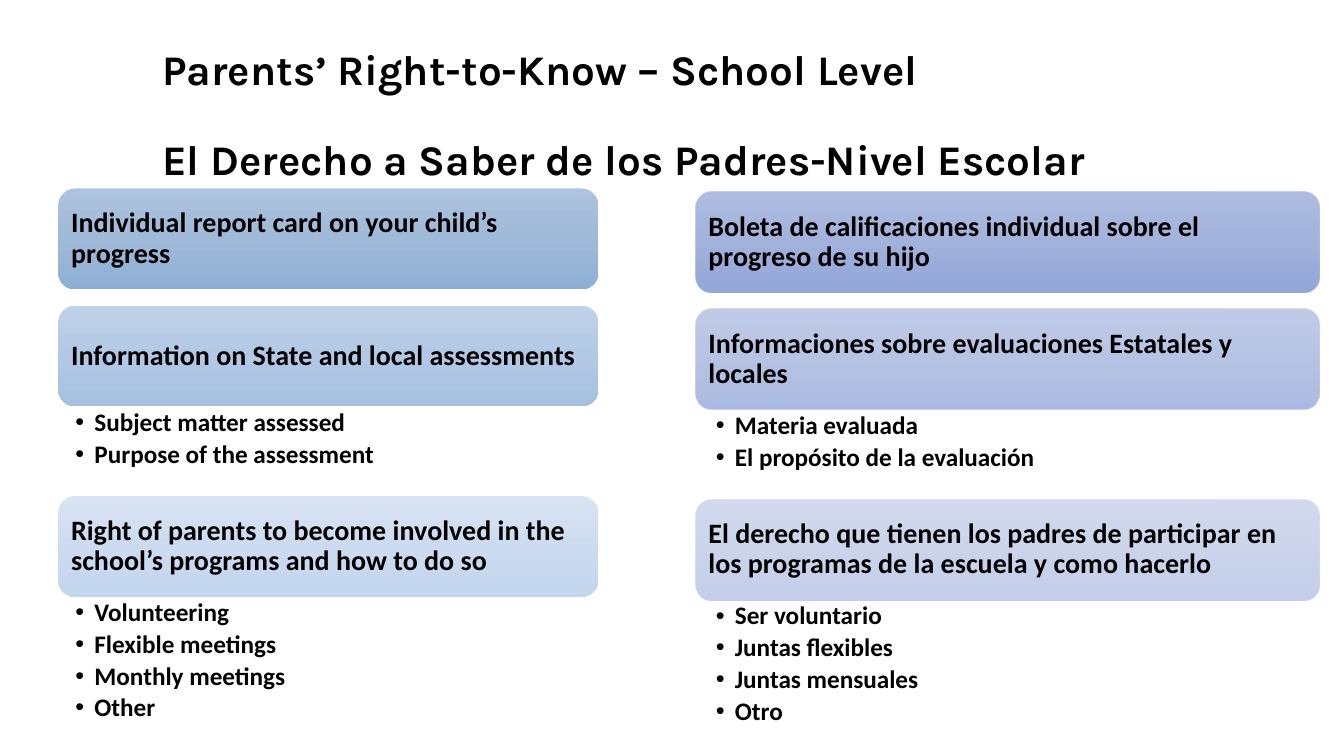
from dataclasses import dataclass

from pptx import Presentation
from pptx.dml.color import RGBColor
from pptx.enum.shapes import MSO_SHAPE
from pptx.enum.text import MSO_ANCHOR as Anchor, MSO_AUTO_SIZE as AutoSize, PP_ALIGN as Align
from pptx.oxml import parse_xml
from pptx.oxml.ns import nsdecls, qn
from pptx.util import Cm, Pt

COLORS = {
    "text": "000000",
    "steel_top": "ADC3DE", "steel_mid": "9FB9D8", "steel_end": "8EAFD5",
    "sky_top": "BFD2E9", "sky_mid": "B2C8E4", "sky_end": "A5C1E2",
    "ice_top": "D9E4F3", "ice_mid": "CCDBEF", "ice_end": "C4D6EE",
    "violet_top": "A8B7DF", "violet_mid": "9AABD9", "violet_end": "889ED7",
}
TITLE_LINES = ["Parents’ Right-to-Know – School Level",
               "El Derecho a Saber de los Padres-Nivel Escolar"]
HEADING_OFFSETS = (0, 2.95, 7.75)
HEADING_HEIGHT = 2.54
BULLET_INDENT = Cm(0.48)


@dataclass
class Topic:
    heading: str
    tint: str
    opacity: int = 100
    bullets: tuple[str, ...] = ()
    placeholder: int = 0
    list_height: float = 0


@dataclass
class Column:
    left: float
    top: float
    width: float
    list_inset: float
    topics: list[Topic]


COLUMNS = [
    Column(1.47, 4.75, 13.61, 0.43, [
        Topic("Individual report card on your child’s progress", "steel"),
        Topic("Information on State and local assessments", "sky", 100,
              ("Subject matter assessed", "Purpose of the assessment"), 1, 2.26),
        Topic("Right of parents to become involved in the school’s programs and how to do so",
              "ice", 100,
              ("Volunteering", "Flexible meetings", "Monthly meetings", "Other"), 2, 3.45),
    ]),
    Column(17.53, 4.83, 15.72, 0.51, [
        Topic("Boleta de calificaciones individual sobre el progreso de su hijo", "violet", 90),
        Topic("Informaciones sobre evaluaciones Estatales y locales", "violet", 70,
              ("Materia evaluada", "El propósito de la evaluación"), 3, 2.26),
        Topic("El derecho que tienen los padres de participar en los programas "
              "de la escuela y como hacerlo", "violet", 50,
              ("Ser voluntario", "Juntas flexibles", "Juntas mensuales", "Otro"), 4, 3.45),
    ]),
]


def place(sp, left: float, top: float, width: float, height: float) -> None:
    sp.left, sp.top, sp.width, sp.height = Cm(left), Cm(top), Cm(width), Cm(height)


def set_frame(tf, anchor, left: float, top: float, right: float, bottom: float) -> None:
    tf.word_wrap = True
    tf.auto_size = AutoSize.NONE
    tf.vertical_anchor = anchor
    tf.margin_left, tf.margin_top = Cm(left), Cm(top)
    tf.margin_right, tf.margin_bottom = Cm(right), Cm(bottom)


def write_lines(tf, lines, font: str, size: float) -> None:
    """Write one bold, left-aligned paragraph per line."""
    tf.text = "\n".join(lines)
    for p in tf.paragraphs:
        p.alignment = Align.LEFT
        p.line_spacing = 0.9
        p.space_before = p.space_after = Pt(0)
        p.font.name, p.font.size, p.font.bold = font, Pt(size), True
        p.font.color.rgb = RGBColor.from_string(COLORS["text"])


def fill_gradient(sp, tint: str, opacity: int) -> None:
    """Fill from top to bottom with the three stops of a tint."""
    stops = "".join(
        f'<a:gs pos="{pos * 1000}"><a:srgbClr val="{COLORS[f"{tint}_{part}"]}">'
        f'<a:alpha val="{opacity * 1000}"/></a:srgbClr></a:gs>'
        for pos, part in ((0, "top"), (50, "mid"), (100, "end")))
    sp.fill.gradient()
    spPr = sp._element.spPr
    spPr.replace(spPr.find(qn("a:gradFill")), parse_xml(
        f'<a:gradFill {nsdecls("a")} rotWithShape="1"><a:gsLst>{stops}</a:gsLst>'
        '<a:lin ang="5400000" scaled="0"/></a:gradFill>'))


def add_bullet(p) -> None:
    pPr = p._p.get_or_add_pPr()
    pPr.set("marL", str(BULLET_INDENT))
    pPr.set("indent", str(-BULLET_INDENT))
    bullet = parse_xml(f'<a:buChar {nsdecls("a")} char="•"/>')
    pPr.insert_element_before(bullet, "a:tabLst", "a:defRPr", "a:extLst")


def draw_title(slide) -> None:
    sp = slide.shapes.title
    place(sp, 3.84, 0.53, 26.16, 3.58)
    set_frame(sp.text_frame, Anchor.TOP, 0.25, 0.7, 0.25, 0.13)
    write_lines(sp.text_frame, TITLE_LINES, "Karla", 30.1)
    sp.text_frame.paragraphs[1].space_before = Pt(32)


def draw_heading(slide, column: Column, topic: Topic, top: float) -> None:
    sp = slide.shapes.add_shape(MSO_SHAPE.ROUNDED_RECTANGLE, Cm(column.left), Cm(top),
                                Cm(column.width), Cm(HEADING_HEIGHT))
    sp.shadow.inherit = False
    sp.line.fill.background()
    fill_gradient(sp, topic.tint, topic.opacity)
    set_frame(sp.text_frame, Anchor.MIDDLE, 0.2, 0.2, 0.2, 0.2)
    write_lines(sp.text_frame, [topic.heading], "Calibri", 20)


def draw_list(slide, column: Column, topic: Topic, top: float) -> None:
    sp = next(ph for ph in slide.placeholders
              if ph.placeholder_format.idx == topic.placeholder)
    place(sp, column.left, top, column.width, topic.list_height)
    set_frame(sp.text_frame, Anchor.TOP, column.list_inset, 0.08, 0.36, 0.08)
    write_lines(sp.text_frame, topic.bullets, "Calibri", 18)
    for p in sp.text_frame.paragraphs:
        p.space_after = Pt(3.2)
        add_bullet(p)


def main() -> None:
    prs = Presentation()
    prs.slide_width, prs.slide_height = Cm(33.87), Cm(19.05)
    comparison_layout = prs.slide_layouts[4]
    slide = prs.slides.add_slide(comparison_layout)
    draw_title(slide)
    for column in COLUMNS:
        for topic, offset in zip(column.topics, HEADING_OFFSETS):
            top = column.top + offset
            draw_heading(slide, column, topic, top)
            if topic.bullets:
                draw_list(slide, column, topic, top + HEADING_HEIGHT)
    prs.save("out.pptx")


if __name__ == "__main__":
    main()
